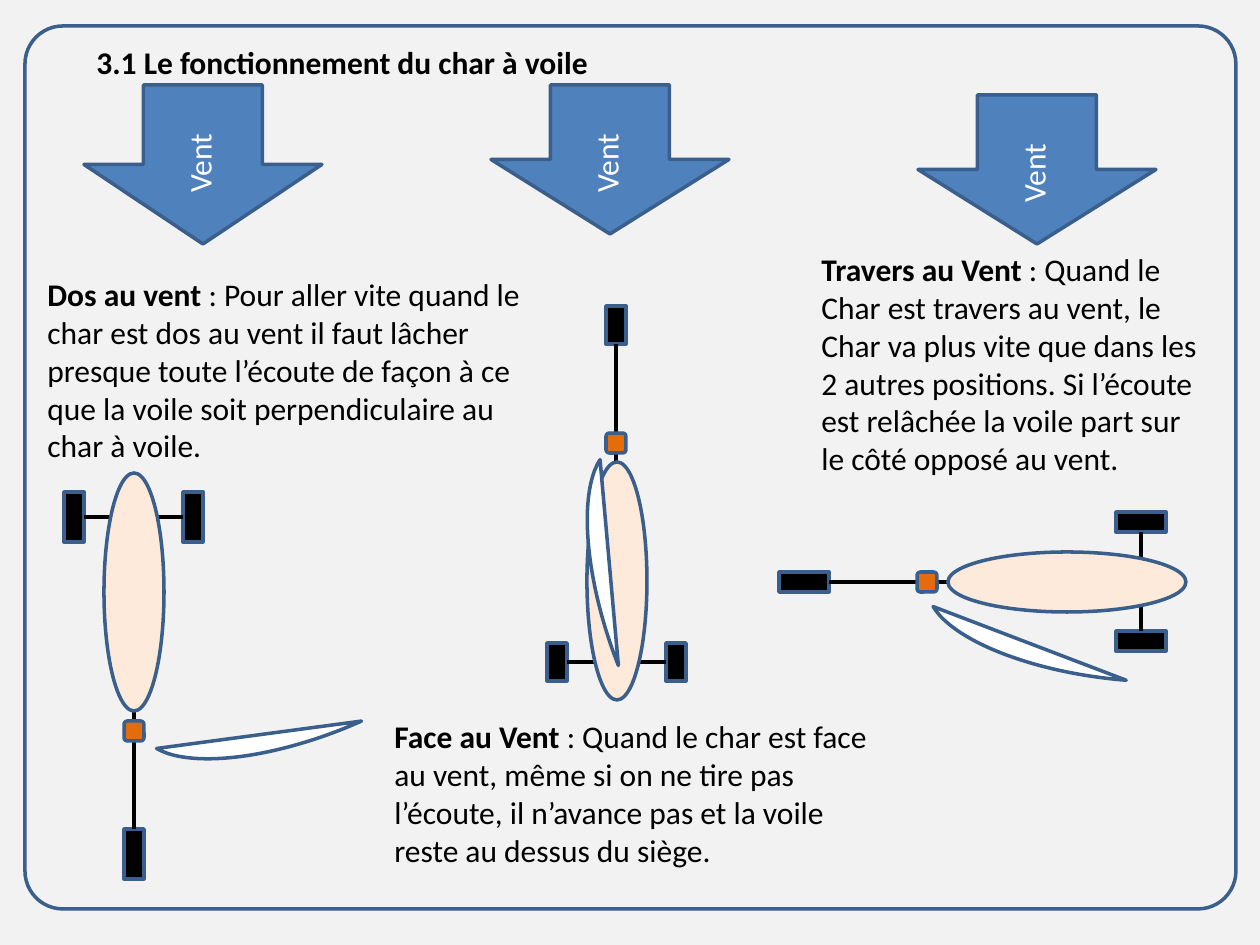
"""Draw the slide on how a land yacht behaves on three headings to the wind."""
from dataclasses import dataclass
from typing import NamedTuple, Optional

from lxml.etree import SubElement
from pptx import Presentation
from pptx.dml.color import RGBColor
from pptx.enum.shapes import MSO_CONNECTOR, MSO_SHAPE
from pptx.enum.text import MSO_AUTO_SIZE
from pptx.oxml.ns import qn
from pptx.util import Emu, Pt

SCALE = 914400 / 126
PAPER = RGBColor(0xF2, 0xF2, 0xF2)
BLACK = RGBColor(0, 0, 0)
WHITE = RGBColor(0xFF, 0xFF, 0xFF)
NAVY = RGBColor(0x3A, 0x5F, 0x8C)
BLUE = RGBColor(0x4F, 0x81, 0xBD)
PEACH = RGBColor(0xFD, 0xEA, 0xDA)
ORANGE = RGBColor(0xE4, 0x6C, 0x0A)
TOP, LEFT, BOTTOM, RIGHT = range(4)


class Box(NamedTuple):
    """A rectangle in px."""
    x: int
    y: int
    w: int
    h: int


@dataclass
class Cart:
    """One land yacht: wheels, hull, hinge, sail and how its bars join."""
    nose: Box
    wheels: tuple[Box, Box]
    sides: tuple[int, int]
    mast: int
    end: tuple[int, int]
    hull: Box
    hinge: Box
    sail: Box
    turn: float


@dataclass
class Note:
    """A text with a bold lead."""
    box: Box
    lead: str
    body: str = ""
    wrap: bool = True


CARTS = [
    Cart(Box(606, 306, 20, 38), (Box(666, 643, 20, 38), Box(547, 643, 20, 38)),
         (LEFT, RIGHT), BOTTOM, (616, 651), Box(587, 462, 60, 238),
         Box(606, 433, 20, 20), Box(607, 436, 139, 372), 341.1),
    Cart(Box(779, 572, 50, 20), (Box(1116, 512, 50, 20), Box(1116, 631, 50, 20)),
         (BOTTOM, TOP), RIGHT, (1137, 582), Box(948, 552, 238, 60),
         Box(917, 572, 20, 20), Box(1043, 423, 139, 372), 277.1),
    Cart(Box(124, 829, 20, 50), (Box(64, 492, 20, 50), Box(183, 492, 20, 50)),
         (RIGHT, LEFT), TOP, (134, 522), Box(104, 473, 60, 238),
         Box(124, 721, 20, 20), Box(246, 479, 139, 372), 248.6),
]
NOTES = [
    Note(Box(84, 37, 522, 50), "3.1 Le fonctionnement du char à voile", wrap=False),
    Note(Box(809, 244, 402, 280), "Travers au Vent ",
         ": Quand le Char est travers au vent, le Char va plus vite que dans les "
         "2 autres positions. Si l’écoute est relâchée la voile part sur le côté "
         "opposé au vent."),
    Note(Box(382, 711, 507, 165), "Face au Vent ",
         ": Quand le char est face au vent, même si on ne tire pas l’écoute, il "
         "n’avance pas et la voile reste au dessus du siège."),
    Note(Box(35, 269, 515, 204), "Dos au vent ",
         ": Pour aller vite quand le char est dos au vent il faut lâcher presque "
         "toute l’écoute de façon à ce que la voile soit perpendiculaire au char "
         "à voile."),
]
WINDS = [Box(84, 85, 238, 159), Box(491, 85, 238, 149), Box(918, 95, 238, 149)]


def px(*sizes: int) -> list[Emu]:
    """Turn px into EMU."""
    return [Emu(round(size * SCALE)) for size in sizes]


def draw(shapes, kind, box: Box, fill: Optional[RGBColor], turn: float = 0):
    """Add an outlined shape."""
    shape = shapes.add_shape(kind, *px(*box))
    shape.shadow.inherit = False
    shape.rotation = turn
    if fill is None:
        shape.fill.background()
    else:
        shape.fill.solid()
        shape.fill.fore_color.rgb = fill
    shape.line.color.rgb = NAVY
    shape.line.width = Pt(2)
    return shape


def link(shapes, start, side: int, end: tuple[int, int]):
    """Add a black bar from the side of a wheel to a point."""
    bar = shapes.add_connector(MSO_CONNECTOR.STRAIGHT, *px(*end, *end))
    bar.begin_connect(start, side)
    bar.line.color.rgb = BLACK
    bar.line.width = Pt(2)
    SubElement(bar.element.spPr, qn("a:effectLst"))
    return bar


def build(shapes, cart: Cart) -> None:
    """Add one land yacht as a group."""
    parts = shapes.add_group_shape().shapes
    nose, first, last = [draw(parts, MSO_SHAPE.RECTANGLE, box, BLACK)
                         for box in (cart.nose, *cart.wheels)]
    axle = link(parts, first, cart.sides[0], cart.end)
    axle.end_connect(last, cart.sides[1])
    link(parts, nose, cart.mast, cart.end)
    draw(parts, MSO_SHAPE.OVAL, cart.hull, PEACH)
    draw(parts, MSO_SHAPE.ROUNDED_RECTANGLE, cart.hinge, ORANGE)
    sail = draw(parts, MSO_SHAPE.CHORD, cart.sail, WHITE, cart.turn)
    sail.adjustments[0] = 97.2
    sail.adjustments[1] = 158.22


def write(para, text: str, color: RGBColor, bold: bool = False) -> None:
    """Add one run."""
    run = para.add_run()
    run.text = text
    run.font.name = "Calibri"
    run.font.size = Pt(18)
    run.font.bold = bold
    run.font.color.rgb = color


def frame(shapes, box: Box, wrap: bool = True):
    """Add a text box that grows with its text."""
    item = shapes.add_textbox(*px(*box))
    item.text_frame.word_wrap = wrap
    item.text_frame.auto_size = MSO_AUTO_SIZE.SHAPE_TO_FIT_TEXT
    return item


def tell(shapes, note: Note) -> None:
    """Add a note."""
    para = frame(shapes, note.box, note.wrap).text_frame.paragraphs[0]
    write(para, note.lead, BLACK, True)
    if note.body:
        write(para, note.body, BLACK)


def blow(shapes, box: Box) -> None:
    """Add a wind arrow with its upright label."""
    parts = shapes.add_group_shape().shapes
    draw(parts, MSO_SHAPE.DOWN_ARROW, box, BLUE)
    label = frame(parts, Box(box.x + 90, box.y + 31, 63, 89))
    label.element.txBody.bodyPr.set("vert", "vert270")
    write(label.text_frame.paragraphs[0], "Vent", WHITE)


def main() -> None:
    """Build and save the slide."""
    deck = Presentation()
    deck.slide_width, deck.slide_height = px(1260, 945)
    slide = deck.slides.add_slide(deck.slide_layouts[6])
    slide.background.fill.solid()
    slide.background.fill.fore_color.rgb = PAPER
    shapes = slide.shapes
    border = draw(shapes, MSO_SHAPE.ROUNDED_RECTANGLE, Box(25, 26, 1211, 883), None)
    border.adjustments[0] = 0.043
    for cart in CARTS:
        build(shapes, cart)
    for note in NOTES:
        tell(shapes, note)
    for wind in WINDS:
        blow(shapes, wind)
    deck.save("out.pptx")


if __name__ == "__main__":
    main()
